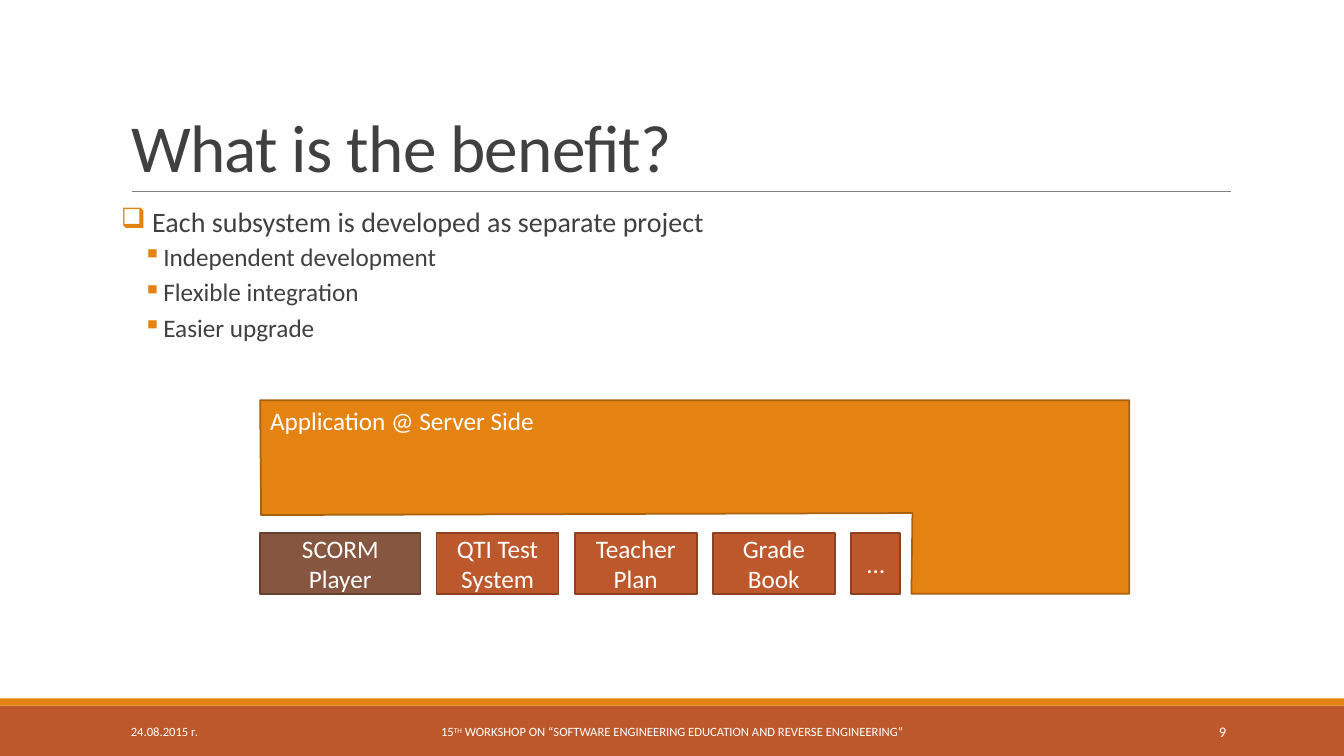
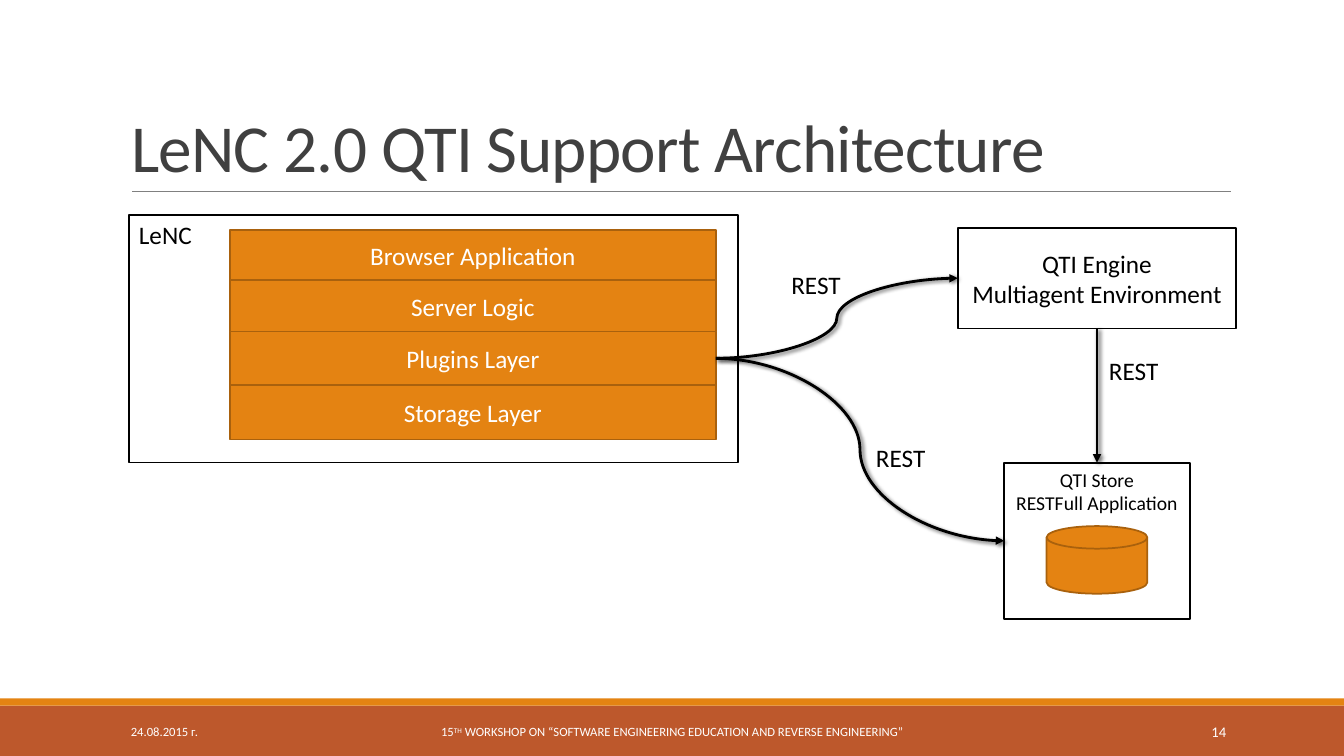
from lxml import etree
from pptx import Presentation
from pptx import util as u
from pptx.dml.color import RGBColor
from pptx.enum import shapes, text
from pptx.oxml.ns import qn

SCALE = 9144  # EMU per px, 100 px to the inch
SLIDE_WIDTH, SLIDE_HEIGHT = 1333, 750
FONT = "Calibri"

WHITE, BLACK, INK, RULE = "FFFFFF", "000000", "404040", "808080"
ORANGE, ORANGE_EDGE = "E48312", "A9610D"
RUST, RUST_EDGE = "BD582C", "8C4121"
BROWN, BROWN_EDGE = "865640", "63402F"

LEFT, CENTER, RIGHT = text.PP_ALIGN.LEFT, text.PP_ALIGN.CENTER, text.PP_ALIGN.RIGHT
TOP, MIDDLE, BOTTOM = text.MSO_ANCHOR.TOP, text.MSO_ANCHOR.MIDDLE, text.MSO_ANCHOR.BOTTOM
RECTANGLE = shapes.MSO_SHAPE.RECTANGLE
STRAIGHT, CURVE = shapes.MSO_CONNECTOR.STRAIGHT, shapes.MSO_CONNECTOR.CURVE
SIDE_TOP, SIDE_LEFT, SIDE_BOTTOM, SIDE_RIGHT = range(4)


def px(*lengths):
    return [u.Emu(length * SCALE) for length in lengths]


def color(hex_string):
    return RGBColor.from_string(hex_string)


def add_run(paragraph, words, size, ink, **attributes):
    """Append a run; attributes go straight onto its a:rPr."""
    run = paragraph.add_run()
    run.text = words
    run.font.name = FONT
    run.font.size = u.Pt(size)
    run.font.color.rgb = color(ink)
    for name, value in attributes.items():
        run.font._element.set(name, value)


def write(frame, lines, size, ink, align=LEFT, anchor=TOP):
    frame.vertical_anchor = anchor
    for index, line in enumerate(lines):
        paragraph = frame.paragraphs[0] if index == 0 else frame.add_paragraph()
        paragraph.alignment = align
        add_run(paragraph, line, size, ink)


def paint(shape, fill, edge=None):
    shape.shadow.inherit = False
    shape.fill.solid()
    shape.fill.fore_color.rgb = color(fill)
    if edge:
        shape.line.color.rgb = color(edge)
        shape.line.width = u.Pt(1.25)
    else:
        shape.line.fill.background()


def add_box(parent, bounds, fill, edge=None, lines=(), size=18, ink=WHITE,
            align=CENTER, anchor=MIDDLE, preset=RECTANGLE):
    box = parent.shapes.add_shape(preset, *px(*bounds))
    paint(box, fill, edge)
    write(box.text_frame, lines, size, ink, align, anchor)
    return box


def add_text_box(slide, bounds, wrap=True):
    frame = slide.shapes.add_textbox(*px(*bounds)).text_frame
    frame.word_wrap = wrap
    return frame


def add_line(slide, kind, ends, ink, width):
    """Draw a connector with an empty effect list, which is returned too."""
    line = slide.shapes.add_connector(kind, *px(*ends))
    line.line.color.rgb = color(ink)
    line.line.width = u.Pt(width)
    effects = etree.SubElement(line._element.spPr, qn("a:effectLst"))
    return line, effects


def add_arrow(slide, kind, start, start_side, end, end_side):
    arrow, effects = add_line(slide, kind, (0, 0, 0, 0), BLACK, 2)
    arrow.begin_connect(start, start_side)
    arrow.end_connect(end, end_side)
    etree.SubElement(arrow.line._get_or_add_ln(), qn("a:tailEnd"), type="triangle")
    shadow = etree.SubElement(
        effects, qn("a:outerShdw"), blurRad=str(u.Pt(3)), dist=str(u.Pt(2)),
        dir="2700000", algn="tl", rotWithShape="0")
    shade = etree.SubElement(shadow, qn("a:srgbClr"), val=BLACK)
    etree.SubElement(shade, qn("a:alpha"), val="60000")


def add_bullet(paragraph, words, level):
    """Format a paragraph as a bullet of level 0 or 1."""
    mark, margin, hang, size, before, after = (
        ("❑", 10, 10, 20, 12, 2), ("▪", 42, 20, 18, 2, 4))[level]
    paragraph.level = level
    paragraph.line_spacing = 0.9
    paragraph.space_before, paragraph.space_after = u.Pt(before), u.Pt(after)
    properties = paragraph._p.get_or_add_pPr()
    properties.set("marL", str(margin * SCALE))
    properties.set("indent", str(-hang * SCALE))
    bullet_color = etree.SubElement(properties, qn("a:buClr"))
    etree.SubElement(bullet_color, qn("a:srgbClr"), val=ORANGE)
    etree.SubElement(properties, qn("a:buChar"), char=mark)
    add_run(paragraph, words, size, INK)


def add_footer(slide, number):
    write(add_text_box(slide, (120, 706, 270, 40)), ["24.08.2015 г."], 9, WHITE,
          anchor=MIDDLE)
    event = add_text_box(slide, (403, 706, 527, 40))
    event.vertical_anchor = MIDDLE
    paragraph = event.paragraphs[0]
    paragraph.alignment = CENTER
    add_run(paragraph, "15", 9, WHITE)
    add_run(paragraph, "TH", 9, WHITE, baseline="30000")
    add_run(paragraph, " WORKSHOP ON “SOFTWARE ENGINEERING EDUCATION AND REVERSE ENGINEERING”",
            9, WHITE)
    write(add_text_box(slide, (1083, 706, 143, 40)), [str(number)], 10.5, WHITE,
          RIGHT, MIDDLE)


def add_slide(presentation, heading, number):
    """Add a slide with the shared bands, rule, title and footer."""
    slide = presentation.slides.add_slide(presentation.slide_layouts[5])
    add_box(slide, (0, 700, SLIDE_WIDTH, 50), RUST)
    add_box(slide, (0, 693, SLIDE_WIDTH, 7), ORANGE)
    add_line(slide, STRAIGHT, (131, 190, 1221, 190), RULE, 0.5)
    title = slide.shapes.title
    title.left, title.top, title.width, title.height = px(120, 31, 1100, 159)
    frame = title.text_frame
    frame.auto_size = text.MSO_AUTO_SIZE.NONE
    frame.vertical_anchor = BOTTOM
    paragraph = frame.paragraphs[0]
    paragraph.alignment = LEFT
    paragraph.line_spacing = 0.85
    add_run(paragraph, heading, 48, INK, spc="-50")
    add_footer(slide, number)
    return slide


def build_benefit(presentation):
    slide = add_slide(presentation, "What is the benefit?", 9)

    frame = add_text_box(slide, (120, 202, 1100, 147))
    frame.margin_left, frame.margin_right = px(0, 0)
    add_bullet(frame.paragraphs[0], " Each subsystem is developed as separate project", 0)
    for benefit in ("Independent development", "Flexible integration", "Easier upgrade"):
        add_bullet(frame.add_paragraph(), benefit, 1)

    builder = slide.shapes.build_freeform(258, 397, scale=SCALE)
    builder.add_line_segments(
        [(1120, 397), (1120, 589), (904, 589), (905, 509), (259, 511)], close=True)
    application = builder.convert_to_shape()
    paint(application, ORANGE, ORANGE_EDGE)
    write(application.text_frame, ["Application @ Server Side"], 18, WHITE)

    left, gap = 258, 16
    for name, width, fill, edge in (
            ("SCORM Player", 159, BROWN, BROWN_EDGE),
            ("QTI Test System", 121, RUST, RUST_EDGE),
            ("Teacher Plan", 121, RUST, RUST_EDGE),
            ("Grade Book", 121, RUST, RUST_EDGE),
            ("…", 49, RUST, RUST_EDGE)):
        add_box(slide, (left, 529, width, 60), fill, edge, [name])
        left += width + gap


def build_architecture(presentation):
    slide = add_slide(presentation, "LeNC 2.0 QTI Support Architecture", 14)

    system = slide.shapes.add_group_shape()
    add_box(system, (128, 213, 604, 246), WHITE, BLACK, ["LeNC"], ink=BLACK,
            align=LEFT, anchor=TOP)
    layers, top = {}, 228
    for name, height in (("Browser Application", 50), ("Server Logic", 51),
                         ("Plugins Layer", 53), ("Storage Layer", 54)):
        layers[name] = add_box(system, (228, top, 482, height), ORANGE, ORANGE_EDGE, [name])
        top += height

    engine = add_box(slide, (950, 226, 276, 100), WHITE, BLACK,
                     ["QTI Engine", "Multiagent Environment"], ink=BLACK)
    storage = slide.shapes.add_group_shape()
    store = add_box(storage, (996, 459, 184, 155), WHITE, BLACK,
                    ["QTI Store", "RESTFull Application"], 14, BLACK, anchor=TOP)
    add_box(storage, (1038, 522, 100, 67), ORANGE, ORANGE_EDGE,
            preset=shapes.MSO_SHAPE.FLOWCHART_MAGNETIC_DISK)

    plugins = layers["Plugins Layer"]
    add_arrow(slide, STRAIGHT, engine, SIDE_BOTTOM, store, SIDE_TOP)
    add_arrow(slide, CURVE, plugins, SIDE_RIGHT, engine, SIDE_LEFT)
    add_arrow(slide, CURVE, plugins, SIDE_RIGHT, store, SIDE_LEFT)
    for left, top in ((1090, 348), (775, 262), (859, 434)):
        write(add_text_box(slide, (left, top, 70, 40), wrap=False), ["REST"], 18, BLACK)


def main():
    presentation = Presentation()
    presentation.slide_width, presentation.slide_height = px(SLIDE_WIDTH, SLIDE_HEIGHT)
    build_benefit(presentation)
    build_architecture(presentation)
    presentation.save("out.pptx")


if __name__ == "__main__":
    main()
